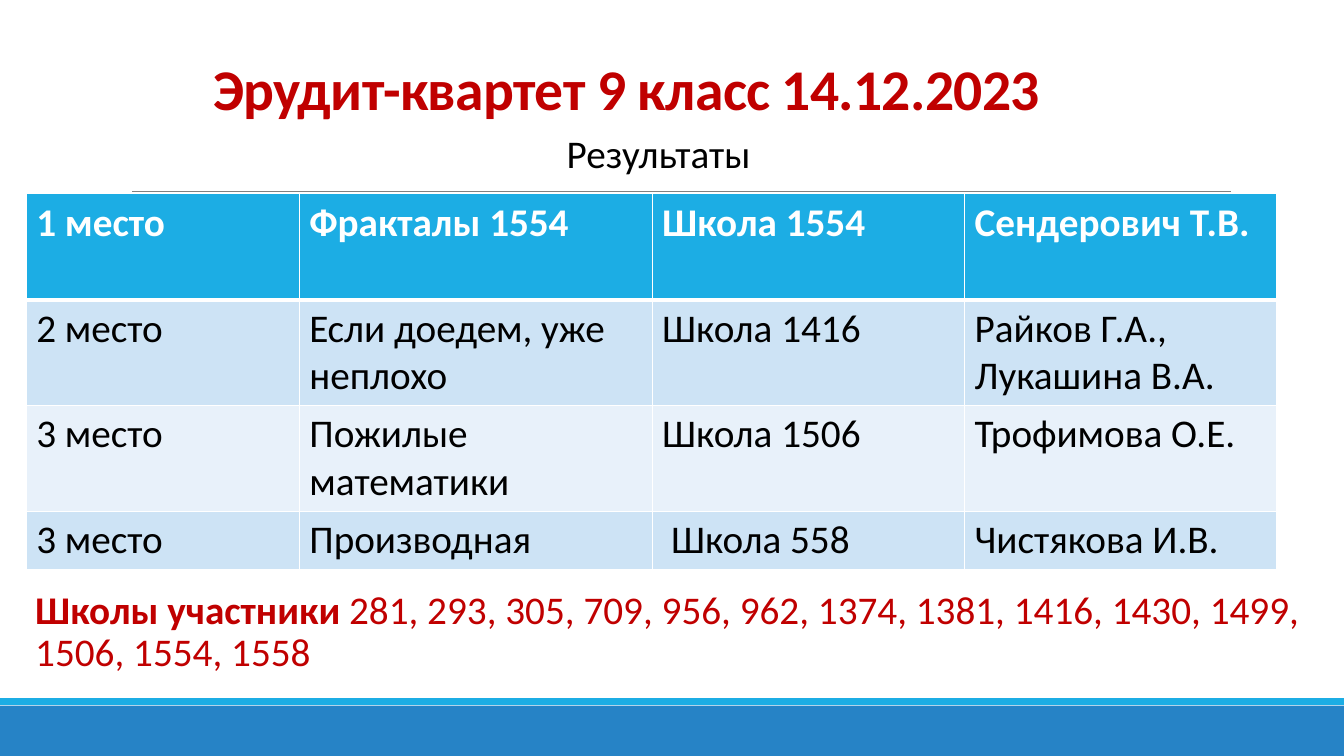
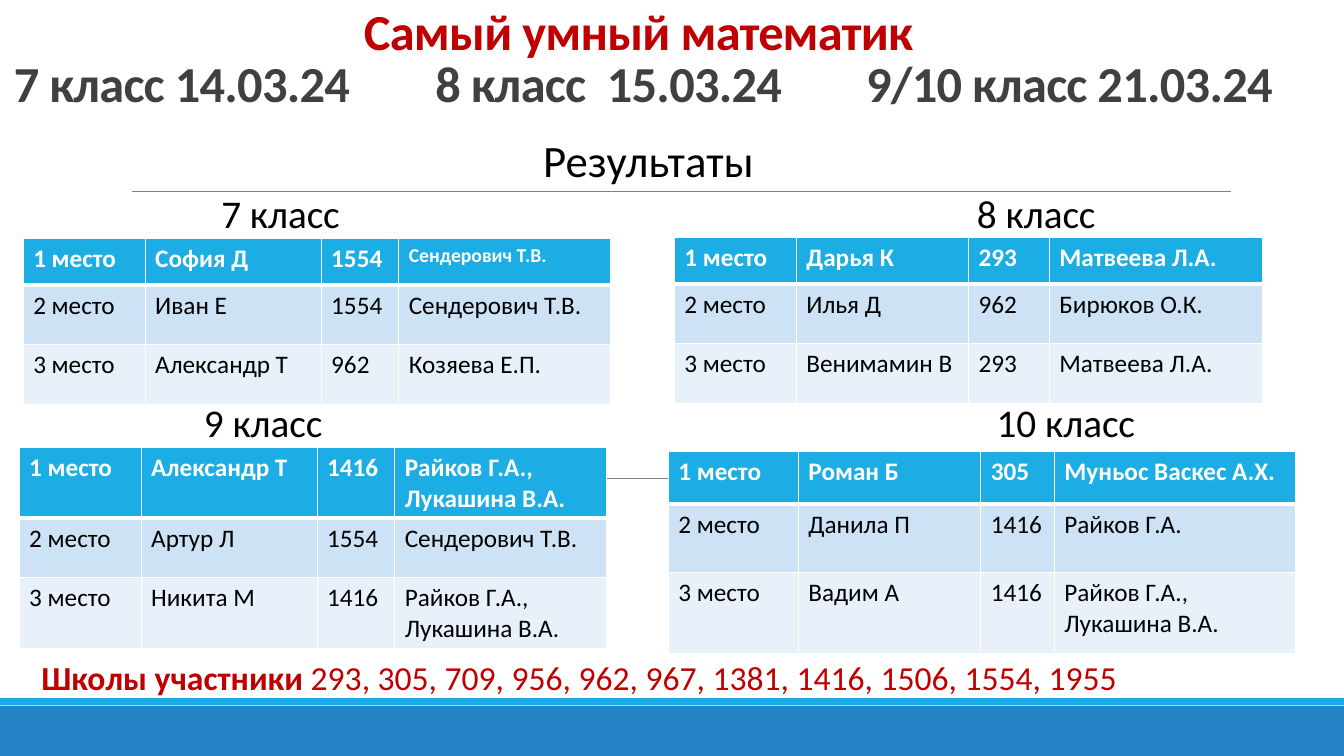
from lxml import etree
from pptx import Presentation, util as u
from pptx.dml.color import RGBColor
from pptx.enum import shapes, text
from pptx.oxml import ns

# Grid: 40 columns by 22.5 rows of square cells
COLUMNS, ROWS = 40, 22.5
CELL = u.Inches(40 / 3) / COLUMNS
FONT = "Calibri"
COLOURS = {
    "red": "C00000", "dark": "404040", "black": "000000", "white": "FFFFFF",
    "rule": "808080", "band": "2683C6", "accent": "1CADE4",
    "odd": "CDE3F5", "even": "E8F1FA",
}
LEFT, CENTRE = text.PP_ALIGN.LEFT, text.PP_ALIGN.CENTER


def grid(*cells):
    return [u.Emu(round(cell * CELL)) for cell in cells]


def colour(name):
    return RGBColor.from_string(COLOURS[name])


# Text
def add_run(paragraph, wording, size, colour_name="black", bold=False, spacing=0):
    run = paragraph.add_run()
    run.text = wording
    font = run.font
    font.name, font.size, font.bold = FONT, u.Pt(size), bold
    font.color.rgb = colour(colour_name)
    if spacing:
        run._r.get_or_add_rPr().set("spc", str(round(spacing * 100)))


def add_text_frame(slide, box, inset=0.3, anchor=text.MSO_ANCHOR.TOP, wrap=True):
    frame = slide.shapes.add_textbox(*grid(*box)).text_frame
    frame.word_wrap = wrap
    frame.vertical_anchor = anchor
    frame.margin_left, frame.margin_right = grid(inset, inset)
    return frame


def set_tabs(paragraph, stops):
    tab_list = etree.SubElement(paragraph._p.get_or_add_pPr(), ns.qn("a:tabLst"))
    for stop in grid(*stops):
        etree.SubElement(tab_list, ns.qn("a:tab"), pos=str(stop), algn="l")


def add_title(slide, box, wording, size, colour_name="red", alignment=CENTRE, stops=()):
    frame = add_text_frame(slide, box, anchor=text.MSO_ANCHOR.BOTTOM)
    paragraph = frame.paragraphs[0]
    paragraph.alignment, paragraph.line_spacing = alignment, 0.85
    if stops:
        set_tabs(paragraph, stops)
    add_run(paragraph, wording, size, colour_name, bold=True, spacing=-0.5)


def add_label(slide, wording, centre, top):
    width = 8
    frame = add_text_frame(slide, (centre - width / 2, top, width, 1.6))
    paragraph = frame.paragraphs[0]
    paragraph.alignment, paragraph.line_spacing = CENTRE, 0.9
    add_run(paragraph, wording, 28)


def add_schools(slide, box, numbers, size):
    paragraph = add_text_frame(slide, box, inset=0).paragraphs[0]
    paragraph.line_spacing = 0.9
    add_run(paragraph, "Школы участники ", size, "red", bold=True)
    add_run(paragraph, numbers, size, "red")


# Shared rules and bands
def add_rule(slide, left, right, row):
    rule = slide.shapes.add_connector(
        shapes.MSO_CONNECTOR.STRAIGHT, *grid(left, row, right, row))
    rule.line.color.rgb, rule.line.width = colour("rule"), u.Pt(0.5)
    etree.SubElement(rule._element.spPr, ns.qn("a:effectLst"))


def add_band(slide, top, height, colour_name):
    band = slide.shapes.add_shape(
        shapes.MSO_SHAPE.RECTANGLE, *grid(0, top, COLUMNS, height))
    band.shadow.inherit = False
    band.fill.solid()
    band.fill.fore_color.rgb = colour(colour_name)
    band.line.fill.background()


def add_base_slide(presentation):
    slide = presentation.slides.add_slide(presentation.slide_layouts[6])
    add_rule(slide, 3.93, 36.63, 5.7)
    add_band(slide, 21, ROWS - 21, "band")
    add_band(slide, 20.78, 0.2, "accent")
    add_rule(slide, 3.96, 36.36, 14.25)
    return slide


# Tables
def set_borders(cell, row):
    properties = cell._tc.get_or_add_tcPr()
    widths = {"lnL": 0.96, "lnR": 0.96,
              "lnT": 3 if row == 1 else 0.96, "lnB": 3 if row == 0 else 0.96}
    for index, (side, width) in enumerate(widths.items()):
        border = etree.Element(ns.qn("a:" + side), w=str(u.Pt(width)))
        fill = etree.SubElement(border, ns.qn("a:solidFill"))
        etree.SubElement(fill, ns.qn("a:srgbClr"), val=COLOURS["white"])
        properties.insert(index, border)


def add_results(slide, left, top, widths, heights, rows, size, special_sizes=None):
    box = grid(left, top, sum(widths), sum(heights))
    table = slide.shapes.add_table(len(rows), len(widths), *box).table
    for column, width in zip(table.columns, grid(*widths)):
        column.width = width
    for row, height in zip(table.rows, grid(*heights)):
        row.height = height
    for row_index, row in enumerate(rows):
        header = row_index == 0
        fill = "accent" if header else "odd" if row_index % 2 else "even"
        for column_index, wording in enumerate(row):
            cell = table.cell(row_index, column_index)
            cell.fill.solid()
            cell.fill.fore_color.rgb = colour(fill)
            set_borders(cell, row_index)
            cell_size = (special_sizes or {}).get((row_index, column_index), size)
            add_run(cell.text_frame.paragraphs[0], wording, cell_size,
                    "white" if header else "black", bold=header)


# Slides
def build_quartet(presentation):
    slide = add_base_slide(presentation)
    add_title(slide, (1.6, 0, 34.1, 3.78), "Эрудит-квартет 9 класс 14.12.2023", 41.1)
    add_schools(slide, (1.05, 17.43, 38.1, 2.7),
                "281, 293, 305, 709, 956, 962, 1374, 1381, 1416, 1430, 1499, "
                "1506, 1554, 1558", 28)
    add_results(slide, 0.78, 5.77, (8.13, 10.5, 9.3, 9.3), (3.15, 3.15, 3.15, 1.74), [
        ("1 место", "Фракталы 1554", "Школа 1554", "Сендерович Т.В."),
        ("2 место", "Если доедем, уже неплохо", "Школа 1416", "Райков Г.А., Лукашина В.А."),
        ("3 место", "Пожилые математики", "Школа 1506", "Трофимова О.Е."),
        ("3 место", "Производная", " Школа 558", "Чистякова И.В."),
    ], 28)
    add_label(slide, "Результаты", 19.6, 3.87)


def build_smartest(presentation):
    slide = add_base_slide(presentation)
    add_title(slide, (0, 0, 38, 1.95), "Самый умный математик", 36)
    add_title(slide, (0.12, 1.6, 39.5, 1.91),
              "7 класс 14.03.24\t8 класс  15.03.24\t9/10 класс 21.03.24",
              36, "dark", LEFT, (12.54, 25.36))
    add_schools(slide, (1.23, 19.53, 38.2, 1.26),
                "293, 305, 709, 956, 962, 967, 1381, 1416, 1506, 1554, 1955", 24)

    for wording, centre, top in (("7 класс", 8.35, 5.64), ("8 класс", 30.84, 5.64),
                                 ("9 класс", 7.83, 11.85), ("10 класс", 31.72, 11.85)):
        add_label(slide, wording, centre, top)

    left_widths, heights = (3.63, 5.24, 2.31, 6.31), (1.38, 1.77, 1.77)
    add_results(slide, 0.69, 7.11, left_widths, heights, [
        ("1 место", "София Д", "1554", "Сендерович Т.В."),
        ("2 место", "Иван Е", "1554", "Сендерович Т.В."),
        ("3 место", "Александр Т", "962", "Козяева Е.П."),
    ], 18, {(0, 3): 14})
    add_results(slide, 0.57, 13.32, left_widths, heights, [
        ("1 место", "Александр Т", "1416", "Райков Г.А., Лукашина В.А."),
        ("2 место", "Артур Л", "1554", "Сендерович Т.В."),
        ("3 место", "Никита М", "1416", "Райков Г.А., Лукашина В.А."),
    ], 18)
    add_results(slide, 20.07, 7.08, (3.63, 5.13, 2.4, 6.36), heights, [
        ("1 место", "Дарья К", "293", "Матвеева Л.А."),
        ("2 место", "Илья Д", "962", "Бирюков О.К."),
        ("3 место", "Венимамин В", "293", "Матвеева Л.А."),
    ], 18)
    add_results(slide, 19.89, 13.44, (3.87, 5.43, 2.19, 7.17), (1.56, 2.04, 2.4), [
        ("1 место", "Роман Б", "305", "Муньос Васкес А.Х."),
        ("2 место", "Данила П", "1416", "Райков Г.А."),
        ("3 место", "Вадим А", "1416", "Райков Г.А., Лукашина В.А."),
    ], 18)

    frame = add_text_frame(slide, (15.87, 3.81, 7.17, 1.89), wrap=False)
    add_run(frame.paragraphs[0], "Результаты", 32)


def main():
    presentation = Presentation()
    presentation.slide_width, presentation.slide_height = grid(COLUMNS, ROWS)
    build_quartet(presentation)
    build_smartest(presentation)
    presentation.save("out.pptx")


if __name__ == "__main__":
    main()
